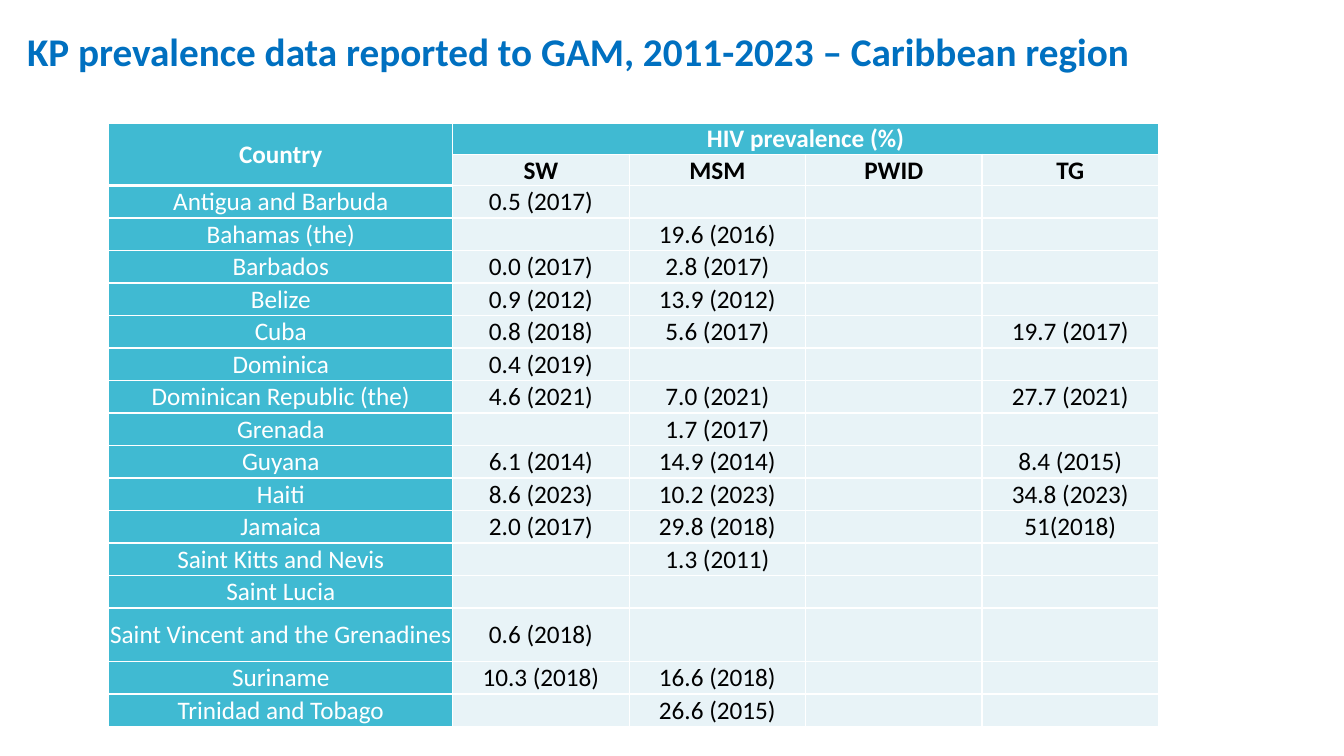
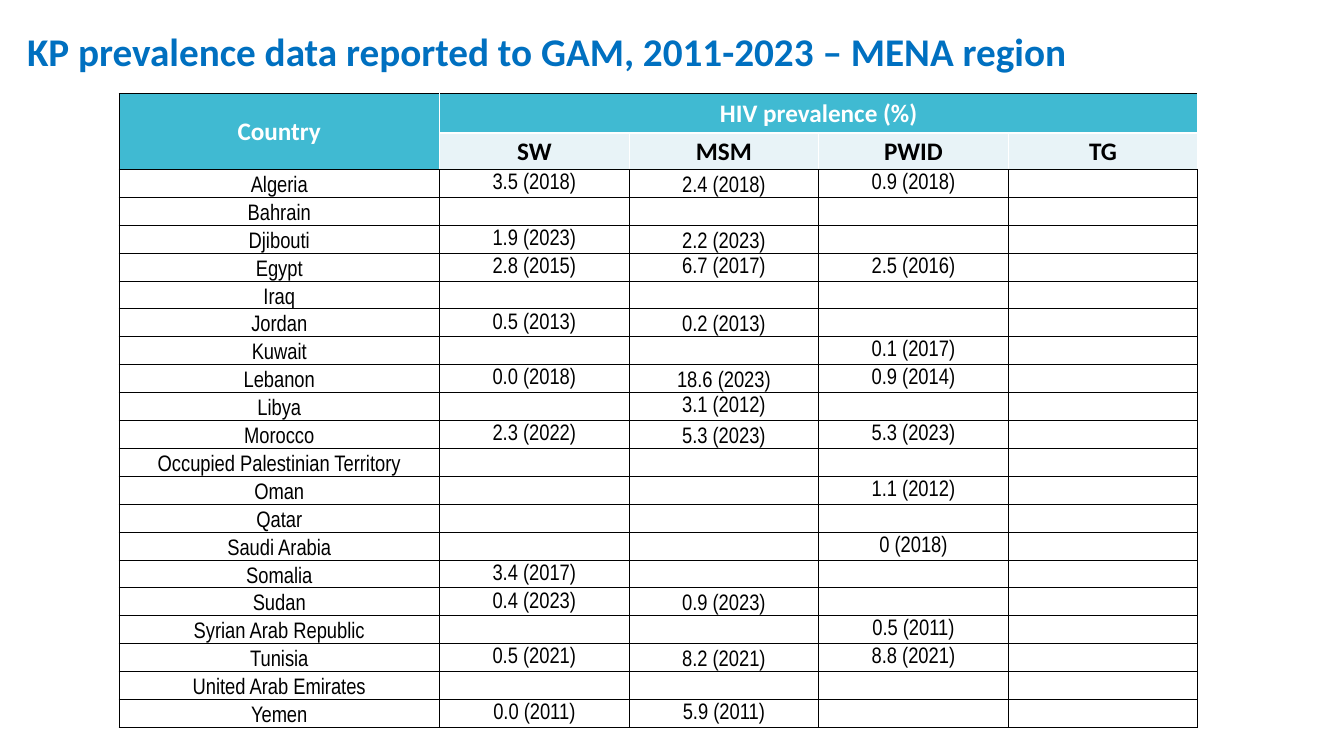
from dataclasses import dataclass
from typing import NamedTuple

from lxml.etree import SubElement
from pptx import Presentation
from pptx.dml.color import RGBColor
from pptx.enum.text import MSO_ANCHOR, MSO_AUTO_SIZE, PP_ALIGN
from pptx.oxml.ns import qn
from pptx.util import Inches, Pt

COLORS = {
    "title": "0070C0",
    "teal": "40BAD2",
    "pale": "E8F3F7",
    "white": "FFFFFF",
    "black": "000000",
}
TITLE_PREFIX = "KP prevalence data reported to GAM, 2011-2023 – "
GROUPS = ("SW", "MSM", "PWID", "TG")
CELL_MARGINS = {
    "margin_left": Inches(0),
    "margin_right": Inches(0),
    "margin_top": Inches(0.01),
    "margin_bottom": Inches(0),
}


class Edge(NamedTuple):
    color: str
    points: float


class TextStyle(NamedTuple):
    font: str
    size: int
    color: str
    bold: bool = False


class CellLook(NamedTuple):
    style: TextStyle
    fill: str | None
    edges: tuple[Edge, Edge, Edge, Edge]
    anchor: MSO_ANCHOR = MSO_ANCHOR.MIDDLE


class Record(NamedTuple):
    country: str
    sw: str = ""
    msm: str = ""
    pwid: str = ""
    tg: str = ""


@dataclass(frozen=True)
class Region:
    name: str
    left: float
    top: float
    height: float
    country_width: float
    group_width: float
    header_heights: tuple[float, float]
    tall_rows: dict[str, float]
    header_looks: tuple[CellLook, CellLook, CellLook]
    body_looks: tuple[CellLook, ...]
    raised_msm: frozenset[str]
    records: tuple[Record, ...]


WHITE_EDGE = Edge("white", 1)
THICK_EDGE = Edge("white", 3)
BLACK_EDGE = Edge("black", 0.5)
WHITE_BOX = (WHITE_EDGE,) * 4
BLACK_BOX = (BLACK_EDGE,) * 4

TITLE = TextStyle("Calibri", 28, "title", True)
HEADING = TextStyle("Calibri", 18, "white", True)
GROUP = TextStyle("Calibri", 18, "black", True)
COUNTRY = TextStyle("Calibri", 18, "white")
VALUE = TextStyle("Calibri", 18, "black")
NARROW = TextStyle("Arial Narrow", 16, "black")

LOW = CellLook(NARROW, None, BLACK_BOX, MSO_ANCHOR.BOTTOM)
MIDDLE = CellLook(NARROW, None, BLACK_BOX)

CARIBBEAN = Region(
    name="Caribbean region",
    left=1.08,
    top=1.22,
    height=5.97,
    country_width=3.41,
    group_width=1.75,
    header_heights=(0.3, 0.3),
    tall_rows={"Saint Vincent and the Grenadines": 0.53},
    header_looks=(
        CellLook(HEADING, "teal", (WHITE_EDGE, WHITE_EDGE, WHITE_EDGE, THICK_EDGE)),
        CellLook(HEADING, "teal", WHITE_BOX),
        CellLook(GROUP, "pale", WHITE_BOX),
    ),
    body_looks=(CellLook(COUNTRY, "teal", WHITE_BOX),)
    + (CellLook(VALUE, "pale", WHITE_BOX),) * 4,
    raised_msm=frozenset(),
    records=(
        Record("Antigua and Barbuda", "0.5 (2017)"),
        Record("Bahamas (the)", msm="19.6 (2016)"),
        Record("Barbados", "0.0 (2017)", "2.8 (2017)"),
        Record("Belize", "0.9 (2012)", "13.9 (2012)"),
        Record("Cuba", "0.8 (2018)", "5.6 (2017)", tg="19.7 (2017)"),
        Record("Dominica", "0.4 (2019)"),
        Record("Dominican Republic (the)", "4.6 (2021)", "7.0 (2021)", tg="27.7 (2021)"),
        Record("Grenada", msm="1.7 (2017)"),
        Record("Guyana", "6.1 (2014)", "14.9 (2014)", tg="8.4 (2015)"),
        Record("Haiti", "8.6 (2023)", "10.2 (2023)", tg="34.8 (2023)"),
        Record("Jamaica", "2.0 (2017)", "29.8 (2018)", tg="51(2018)"),
        Record("Saint Kitts and Nevis", msm="1.3 (2011)"),
        Record("Saint Lucia"),
        Record("Saint Vincent and the Grenadines", "0.6 (2018)"),
        Record("Suriname", "10.3 (2018)", "16.6 (2018)"),
        Record("Trinidad and Tobago", msm="26.6 (2015)"),
    ),
)

MENA = Region(
    name="MENA region",
    left=1.18,
    top=0.93,
    height=6.29,
    country_width=3.18,
    group_width=1.88,
    header_heights=(0.39, 0.36),
    tall_rows={},
    header_looks=(
        CellLook(HEADING, "teal", (BLACK_EDGE, WHITE_EDGE, BLACK_EDGE, BLACK_EDGE)),
        CellLook(HEADING, "teal", (WHITE_EDGE, WHITE_EDGE, BLACK_EDGE, WHITE_EDGE)),
        CellLook(GROUP, "pale", (WHITE_EDGE, WHITE_EDGE, WHITE_EDGE, BLACK_EDGE)),
    ),
    body_looks=(LOW, MIDDLE, LOW, MIDDLE, MIDDLE),
    raised_msm=frozenset({"Egypt", "Libya", "Yemen"}),
    records=(
        Record("Algeria", "3.5 (2018)", "2.4 (2018)", "0.9 (2018)"),
        Record("Bahrain"),
        Record("Djibouti", "1.9 (2023)", "2.2 (2023)"),
        Record("Egypt", "2.8 (2015)", "6.7 (2017)", "2.5 (2016)"),
        Record("Iraq"),
        Record("Jordan", "0.5 (2013)", "0.2 (2013)"),
        Record("Kuwait", pwid="0.1 (2017)"),
        Record("Lebanon", "0.0 (2018)", "18.6 (2023)", "0.9 (2014)"),
        Record("Libya", msm="3.1 (2012)"),
        Record("Morocco", "2.3 (2022)", "5.3 (2023)", "5.3 (2023)"),
        Record("Occupied Palestinian Territory"),
        Record("Oman", pwid="1.1 (2012)"),
        Record("Qatar"),
        Record("Saudi Arabia", pwid="0 (2018)"),
        Record("Somalia", "3.4 (2017)"),
        Record("Sudan", "0.4 (2023)", "0.9 (2023)"),
        Record("Syrian Arab Republic", pwid="0.5 (2011)"),
        Record("Tunisia", "0.5 (2021)", "8.2 (2021)", "8.8 (2021)"),
        Record("United Arab Emirates"),
        Record("Yemen", "0.0 (2011)", "5.9 (2011)"),
    ),
)


def rgb(color: str) -> RGBColor:
    return RGBColor.from_string(COLORS[color])


def write_text(para, text: str, style: TextStyle) -> None:
    if not text:
        SubElement(para._p, qn("a:endParaRPr"), sz=str(style.size * 100))
        return
    span = para.add_run()
    span.text = text
    formats = {"name": style.font, "size": Pt(style.size), "bold": style.bold}
    for attribute, value in formats.items():
        setattr(span.font, attribute, value)
    span.font.color.rgb = rgb(style.color)


def add_title(page, text: str) -> None:
    box = page.shapes.add_textbox(Inches(0.17), Inches(0.22), Inches(12.73), Inches(0.57))
    frame = box.text_frame
    frame.word_wrap = True
    frame.auto_size = MSO_AUTO_SIZE.SHAPE_TO_FIT_TEXT
    write_text(frame.paragraphs[0], text, TITLE)


def set_edges(cell, edges: tuple[Edge, Edge, Edge, Edge]) -> None:
    properties = cell._tc.get_or_add_tcPr()
    for position, (side, edge) in enumerate(zip("LRTB", edges)):
        line = SubElement(properties, qn(f"a:ln{side}"), w=str(Pt(edge.points)))
        fill = SubElement(line, qn("a:solidFill"))
        SubElement(fill, qn("a:srgbClr"), val=COLORS[edge.color])
        properties.insert(position, line)


def fill_cell(cell, text: str, look: CellLook) -> None:
    for attribute, value in {**CELL_MARGINS, "vertical_anchor": look.anchor}.items():
        setattr(cell, attribute, value)
    if look.fill:
        cell.fill.solid()
        cell.fill.fore_color.rgb = rgb(look.fill)
    else:
        cell.fill.background()
    set_edges(cell, look.edges)
    para = cell.text_frame.paragraphs[0]
    para.alignment = PP_ALIGN.CENTER
    write_text(para, text, look.style)


def row_heights(region: Region) -> list[float]:
    fixed = sum(region.header_heights) + sum(region.tall_rows.values())
    regular = (region.height - fixed) / (len(region.records) - len(region.tall_rows))
    body = [region.tall_rows.get(record.country, regular) for record in region.records]
    return [*region.header_heights, *body]


def add_prevalence_table(page, region: Region) -> None:
    widths = [region.country_width] + [region.group_width] * len(GROUPS)
    heights = row_heights(region)
    table = page.shapes.add_table(
        len(heights), len(widths), Inches(region.left), Inches(region.top),
        Inches(sum(widths)), Inches(region.height),
    ).table
    table.first_row = table.horz_banding = False
    for column, width in zip(table.columns, widths):
        column.width = Inches(width)
    for row, height in zip(table.rows, heights):
        row.height = Inches(height)

    table.cell(0, 0).merge(table.cell(1, 0))
    table.cell(0, 1).merge(table.cell(0, len(GROUPS)))
    country_look, heading_look, group_look = region.header_looks
    fill_cell(table.cell(0, 0), "Country", country_look)
    fill_cell(table.cell(1, 0), "", country_look)
    for column, group in enumerate(GROUPS, 1):
        fill_cell(table.cell(0, column), "HIV prevalence (%)" if column == 1 else "", heading_look)
        fill_cell(table.cell(1, column), group, group_look)

    msm_column = GROUPS.index("MSM") + 1
    for row, record in enumerate(region.records, len(region.header_heights)):
        for column, (text, look) in enumerate(zip(record, region.body_looks)):
            if column == msm_column and record.country in region.raised_msm:
                look = look._replace(anchor=MSO_ANCHOR.MIDDLE)
            fill_cell(table.cell(row, column), text, look)


def main() -> None:
    deck = Presentation()
    deck.slide_width = Inches(13.33)
    deck.slide_height = Inches(7.5)
    for region in (CARIBBEAN, MENA):
        page = deck.slides.add_slide(deck.slide_layouts[6])
        add_title(page, TITLE_PREFIX + region.name)
        add_prevalence_table(page, region)
    deck.save("out.pptx")


if __name__ == "__main__":
    main()
